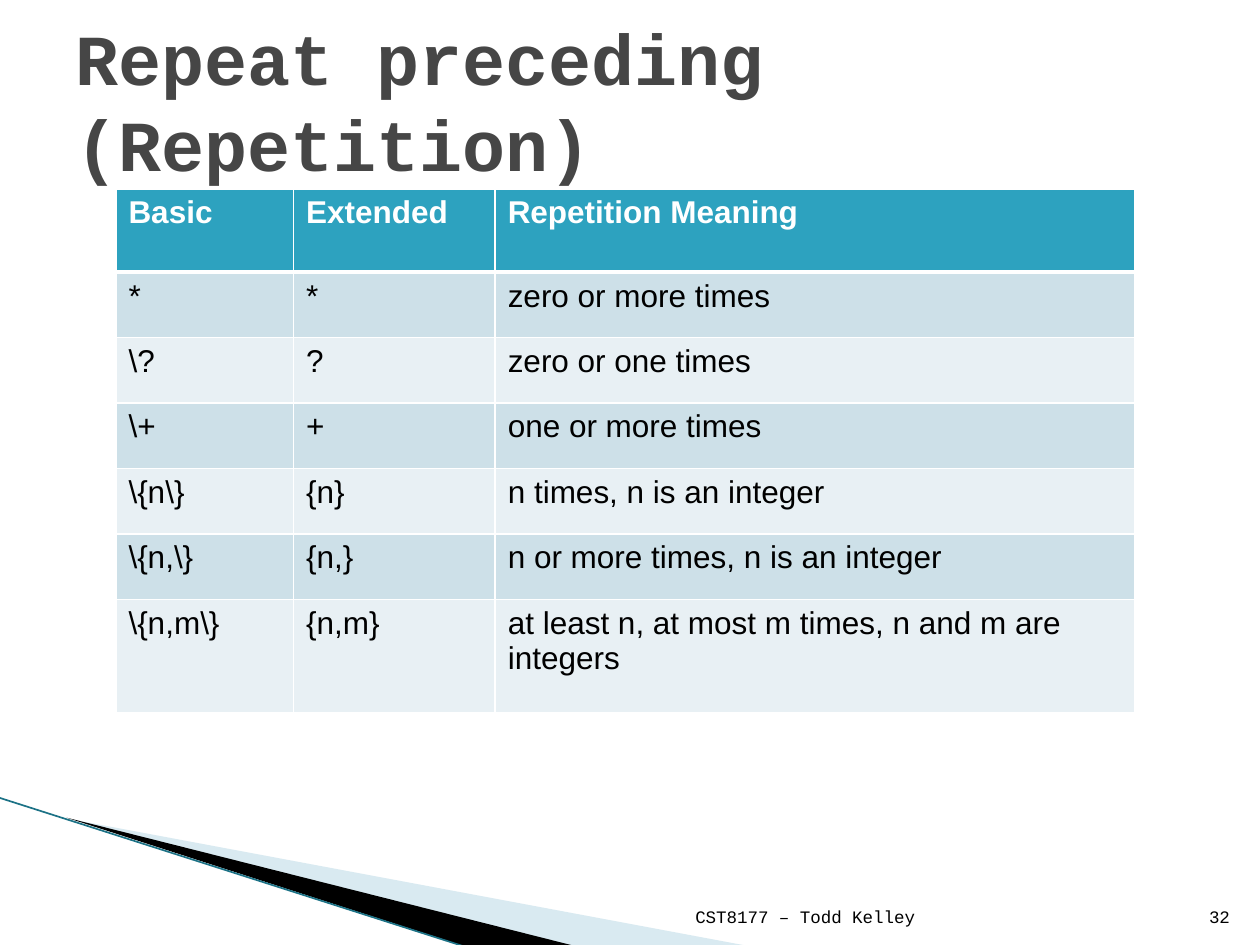
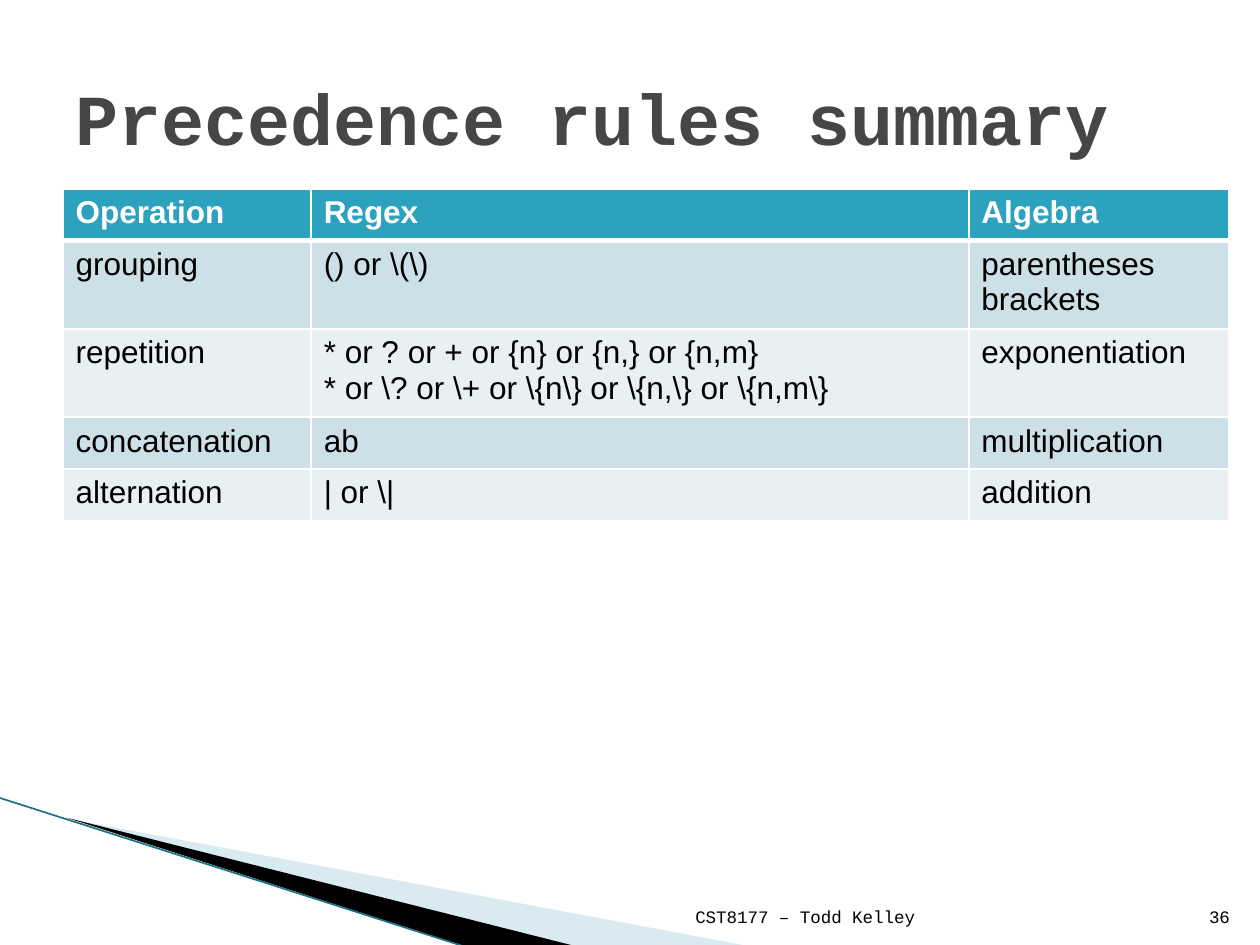
from dataclasses import dataclass

from lxml import etree
from pptx import Presentation
from pptx.dml.color import RGBColor
from pptx.enum.shapes import MSO_CONNECTOR
from pptx.enum.text import MSO_ANCHOR, PP_ALIGN
from pptx.oxml.ns import qn
from pptx.util import Inches, Pt

STRAIGHT = MSO_CONNECTOR.STRAIGHT
MIDDLE, BOTTOM = MSO_ANCHOR.MIDDLE, MSO_ANCHOR.BOTTOM
LEFT, RIGHT = PP_ALIGN.LEFT, PP_ALIGN.RIGHT

FOOTER = "CST8177 – Todd Kelley"
SLIDES = [
    {
        "title": "Repeat preceding (Repetition)",
        "title_top": 0.17,
        "number": 32,
        "table_left": 0.92,
        "columns": [1.41, 1.6, 5.08],
        "heights": [0.66] + [0.52] * 5 + [0.9],
        "rows": [
            ("Basic", "Extended", "Repetition Meaning"),
            ("*", "*", "zero or more times"),
            (r"\?", "?", "zero or one times"),
            (r"\+", "+", "one or more times"),
            (r"\{n\}", "{n}", "n times, n is an integer"),
            (r"\{n,\}", "{n,}", "n or more times, n is an integer"),
            (r"\{n,m\}", "{n,m}", "at least n, at most m times, n and m are integers"),
        ],
    },
    {
        "title": "Precedence rules summary",
        "title_top": 0.3,
        "number": 36,
        "table_left": 0.5,
        "columns": [1.97, 5.22, 2.06],
        "heights": [0.41] * 5,
        "rows": [
            ("Operation", "Regex", "Algebra"),
            ("grouping", r"() or \(\)", "parentheses\nbrackets"),
            ("repetition",
             "* or ? or + or {n} or {n,} or {n,m}\n"
             r"* or \? or \+ or \{n\} or \{n,\} or \{n,m\}",
             "exponentiation"),
            ("concatenation", "ab", "multiplication"),
            ("alternation", r"| or \|", "addition"),
        ],
    },
]


@dataclass(frozen=True)
class Theme:
    title: str = "464646"
    text: str = "000000"
    white: str = "FFFFFF"
    header: str = "2DA2BF"
    bands: tuple = ("CDE0E8", "E8F0F4")
    pale_wedge: str = "A0CBDC"
    pale_opacity: int = 40
    dark_wedge: str = "000000"
    edge: str = "1C7286"
    mono: str = "Courier New"
    sans: str = "Arial"
    title_size: float = 41
    table_size: float = 18
    footer_size: float = 10
    edge_width: float = 0.95
    border: float = 1
    header_border: float = 3


THEME = Theme()
TABLE_TOP = 1.5
FOOTER_TOP, FOOTER_HEIGHT = 7.01, 0.4
PALE_WEDGE = [(0.55, 6.5), (5.95, 7.51), (4.56, 7.51)]
DARK_WEDGE = [(0.53, 6.49), (4.57, 7.51), (3.72, 7.52)]
EDGE = (-0.01, 6.33, 3.71, 7.52)


def rgb(color):
    return RGBColor.from_string(color)


def style_text(text_frame, font, size, color, bold=False, align=LEFT):
    for paragraph in text_frame.paragraphs:
        paragraph.alignment = align
        for run in paragraph.runs:
            run.font.name = font
            run.font.size = Pt(size)
            run.font.bold = bold
            run.font.color.rgb = rgb(color)


def add_text(slide, text, box, anchor, *style):
    shape = slide.shapes.add_textbox(*map(Inches, box))
    text_frame = shape.text_frame
    text_frame.word_wrap = True
    text_frame.vertical_anchor = anchor
    text_frame.text = text
    style_text(text_frame, *style)


def add_wedge(slide, points, color, opacity=100):
    corners = [(Inches(x), Inches(y)) for x, y in points]
    builder = slide.shapes.build_freeform(*corners[0])
    builder.add_line_segments(corners[1:], close=True)
    shape = builder.convert_to_shape()
    shape.shadow.inherit = False
    shape.fill.solid()
    shape.fill.fore_color.rgb = rgb(color)
    shape.line.fill.background()
    if opacity < 100:
        fill_color = shape.fill._xPr.find(f".//{qn('a:srgbClr')}")
        etree.SubElement(fill_color, qn("a:alpha"), val=str(opacity * 1000))


def add_corner_band(slide):
    add_wedge(slide, PALE_WEDGE, THEME.pale_wedge, THEME.pale_opacity)
    add_wedge(slide, DARK_WEDGE, THEME.dark_wedge)
    edge = slide.shapes.add_connector(STRAIGHT, *map(Inches, EDGE))
    edge.line.color.rgb = rgb(THEME.edge)
    edge.line.width = Pt(THEME.edge_width)
    etree.SubElement(edge._element.spPr, qn("a:effectLst"))


def set_borders(cell, row_index):
    """Draw white cell borders, thicker between the header and the body."""
    widths = dict.fromkeys(("a:lnL", "a:lnR", "a:lnT", "a:lnB"), THEME.border)
    if row_index == 0:
        widths["a:lnB"] = THEME.header_border
    elif row_index == 1:
        widths["a:lnT"] = THEME.header_border
    properties = cell._tc.get_or_add_tcPr()
    for tag, width in widths.items():
        line = etree.SubElement(properties, qn(tag), w=str(Pt(width)))
        fill = etree.SubElement(line, qn("a:solidFill"))
        etree.SubElement(fill, qn("a:srgbClr"), val=THEME.white)


def add_rules_table(slide, content):
    rows, columns, heights = content["rows"], content["columns"], content["heights"]
    box = (content["table_left"], TABLE_TOP, sum(columns), sum(heights))
    table = slide.shapes.add_table(len(rows), len(columns), *map(Inches, box)).table
    for column, width in zip(table.columns, columns):
        column.width = Inches(width)
    for row_index, (row, height) in enumerate(zip(rows, heights)):
        table.rows[row_index].height = Inches(height)
        is_header = row_index == 0
        fill = THEME.header if is_header else THEME.bands[(row_index - 1) % 2]
        color = THEME.white if is_header else THEME.text
        for column_index, text in enumerate(row):
            cell = table.cell(row_index, column_index)
            cell.text_frame.text = text
            style_text(cell.text_frame, THEME.sans, THEME.table_size, color, is_header)
            set_borders(cell, row_index)
            cell.fill.solid()
            cell.fill.fore_color.rgb = rgb(fill)


def add_footer(slide, number):
    for text, left, width in ((FOOTER, 4.79, 2.57), (str(number), 9.46, 0.4)):
        add_text(slide, text, (left, FOOTER_TOP, width, FOOTER_HEIGHT), BOTTOM,
                 THEME.mono, THEME.footer_size, THEME.text, False, RIGHT)


def main():
    presentation = Presentation()
    presentation.slide_width = Inches(10)
    presentation.slide_height = Inches(7.5)
    for content in SLIDES:
        slide = presentation.slides.add_slide(presentation.slide_layouts[6])
        add_corner_band(slide)
        add_text(slide, content["title"], (0.5, content["title_top"], 9, 1.25), MIDDLE,
                 THEME.mono, THEME.title_size, THEME.title, True)
        add_footer(slide, content["number"])
        add_rules_table(slide, content)
    presentation.save("out.pptx")


if __name__ == "__main__":
    main()
